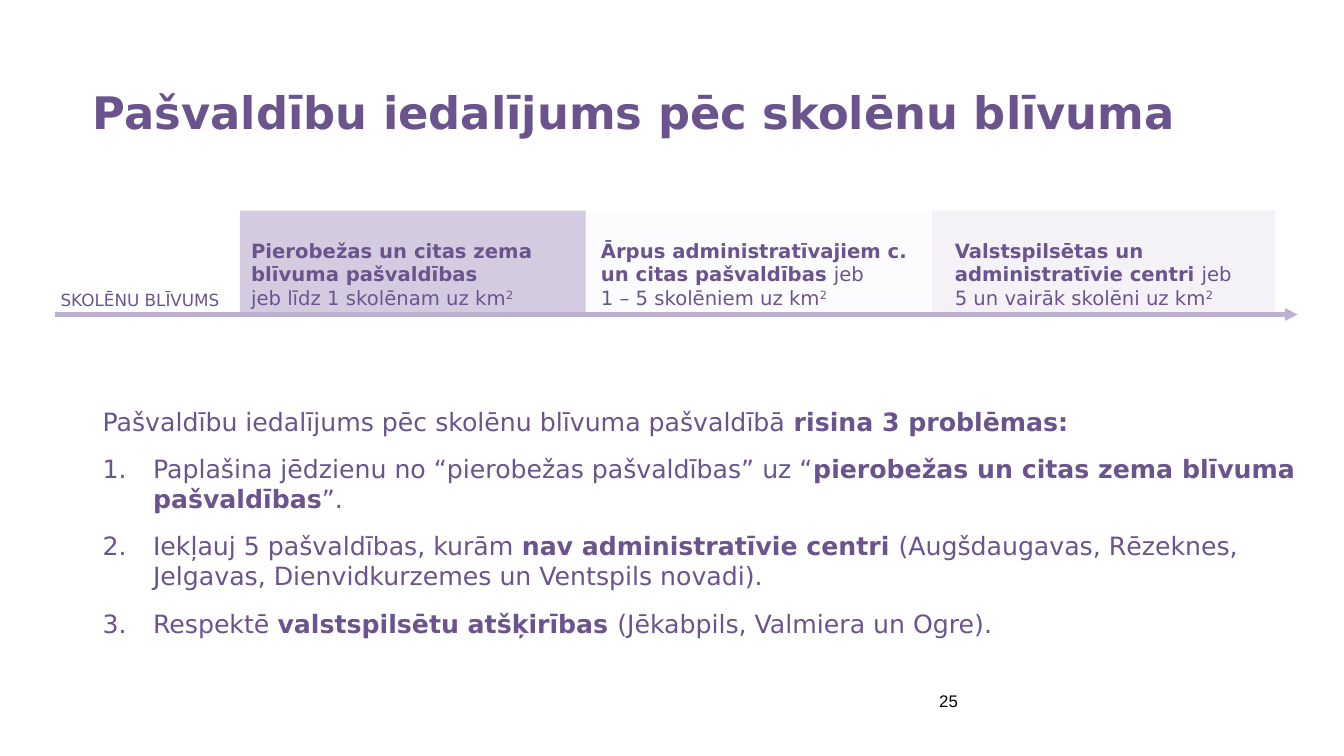
from dataclasses import dataclass

from pptx import Presentation
from pptx.dml.color import RGBColor
from pptx.enum.shapes import MSO_CONNECTOR, MSO_SHAPE
from pptx.enum.text import MSO_ANCHOR, MSO_AUTO_SIZE, PP_ALIGN
from pptx.oxml.ns import qn
from pptx.slide import Slide
from pptx.text.text import TextFrame, _Paragraph as Paragraph
from pptx.util import Emu, Pt
from lxml.etree import SubElement

PURPLE = RGBColor(0x6B, 0x54, 0x8D)
AXIS_COLOR = RGBColor(0xBD, 0xB0, 0xCF)
BLACK = RGBColor(0, 0, 0)
FONT = "DejaVu Sans"
EMU_PER_PX = 9144
BAND_TOP, BAND_HEIGHT = 209, 104
BAND_OPACITY = 28
AXIS_Y = 312


@dataclass(frozen=True)
class Span:
    text: str
    bold: bool = False
    superscript: bool = False


@dataclass(frozen=True)
class Box:
    left: int
    top: int
    width: int
    height: int

    def emu(self) -> tuple[Emu, ...]:
        return tuple(px(side) for side in (self.left, self.top, self.width, self.height))


@dataclass(frozen=True)
class Band:
    left: int
    width: int
    color: RGBColor
    label_left: int
    label_width: int
    heading: str
    joined: str
    density: str


BANDS = [
    Band(238, 343, RGBColor(0x66, 0x46, 0x90), 244, 322,
         "Pierobežas un citas zema blīvuma pašvaldības", "", "jeb līdz 1 skolēnam uz km"),
    Band(581, 341, RGBColor(0xF5, 0xF4, 0xF8), 591, 317,
         "Ārpus administratīvajiem c. un citas pašvaldības ", "jeb", "1 – 5 skolēniem uz km"),
    Band(924, 341, RGBColor(0xDA, 0xD3, 0xE5), 942, 304,
         "Valstspilsētas un administratīvie centri ", "jeb", "5 un vairāk skolēni uz km"),
]

INTRO = [Span("Pašvaldību iedalījums pēc skolēnu blīvuma pašvaldībā "),
         Span("risina 3 problēmas:", bold=True)]
PROBLEMS = [
    [Span("Paplašina jēdzienu no “pierobežas pašvaldības” uz “"),
     Span("pierobežas un citas zema blīvuma pašvaldības", bold=True), Span("”.")],
    [Span("Iekļauj 5 pašvaldības, kurām "), Span("nav administratīvie centri ", bold=True),
     Span("(Augšdaugavas, Rēzeknes, Jelgavas, Dienvidkurzemes un Ventspils novadi).")],
    [Span("Respektē "), Span("valstspilsētu atšķirības ", bold=True),
     Span("(Jēkabpils, Valmiera un Ogre).")],
]


def px(length: int) -> Emu:
    return Emu(length * EMU_PER_PX)


def write_spans(paragraph: Paragraph, spans: list[Span], size: int,
                color: RGBColor = PURPLE, font_name: str = FONT) -> None:
    for span in spans:
        run = paragraph.add_run()
        run.text = span.text
        run.font.name = font_name
        run.font.size = Pt(size)
        run.font.bold = span.bold
        run.font.color.rgb = color
        if span.superscript:
            run._r.get_or_add_rPr().set("baseline", "30000")


def set_margins(frame: TextFrame, horizontal: int, vertical: int) -> None:
    frame.margin_left = frame.margin_right = px(horizontal)
    frame.margin_top = frame.margin_bottom = px(vertical)


def add_text(slide: Slide, box: Box, paragraphs: list[list[Span]], size: int,
             color: RGBColor = PURPLE, font_name: str = FONT,
             horizontal_margin: int = 5) -> TextFrame:
    frame = slide.shapes.add_textbox(*box.emu()).text_frame
    frame.word_wrap = True
    set_margins(frame, horizontal_margin, 5)
    for index, spans in enumerate(paragraphs):
        paragraph = frame.add_paragraph() if index else frame.paragraphs[0]
        write_spans(paragraph, spans, size, color, font_name)
    return frame


def format_title(slide: Slide) -> None:
    title = slide.shapes.title
    title.left, title.top, title.width, title.height = Box(92, 80, 1150, 68).emu()
    frame = title.text_frame
    frame.auto_size = MSO_AUTO_SIZE.NONE
    frame.vertical_anchor = MSO_ANCHOR.MIDDLE
    set_margins(frame, 0, 0)
    paragraph = frame.paragraphs[0]
    paragraph.alignment = PP_ALIGN.LEFT
    paragraph.line_spacing = 0.9
    write_spans(paragraph, [Span("Pašvaldību iedalījums pēc skolēnu blīvuma", bold=True)], 32)


def add_problems(slide: Slide) -> None:
    frame = add_text(slide, Box(92, 398, 1203, 242), [INTRO, *PROBLEMS], 18,
                     horizontal_margin=10)
    for index, paragraph in enumerate(frame.paragraphs):
        paragraph.space_after = Pt(6)
        if index:
            paragraph.space_before = Pt(6)
            properties = paragraph._p.get_or_add_pPr()
            properties.set("marL", str(px(50)))
            properties.set("indent", str(px(-50)))
            SubElement(properties, qn("a:buFont"), typeface="+mj-lt")
            SubElement(properties, qn("a:buAutoNum"), type="arabicPeriod")


def add_band(slide: Slide, band: Band) -> None:
    box = Box(band.left, BAND_TOP, band.width, BAND_HEIGHT)
    shape = slide.shapes.add_shape(MSO_SHAPE.RECTANGLE, *box.emu())
    shape.shadow.inherit = False
    shape.line.fill.background()
    shape.fill.solid()
    shape.fill.fore_color.rgb = band.color
    color = shape._element.spPr.find(qn("a:solidFill")).find(qn("a:srgbClr"))
    SubElement(color, qn("a:alpha"), val=str(BAND_OPACITY * 1000))


def add_band_label(slide: Slide, band: Band) -> None:
    heading = [Span(band.heading, bold=True)]
    if band.joined:
        heading.append(Span(band.joined))
    density = [Span(band.density), Span("2", superscript=True)]
    add_text(slide, Box(band.label_left, 232, band.label_width, 81), [heading, density], 14)


def add_axis(slide: Slide) -> None:
    axis = slide.shapes.add_connector(
        MSO_CONNECTOR.STRAIGHT, px(55), px(AXIS_Y), px(1287), px(AXIS_Y))
    axis.line.color.rgb = AXIS_COLOR
    axis.line.width = Pt(3)
    SubElement(axis.line._get_or_add_ln(), qn("a:tailEnd"), type="triangle")
    SubElement(axis._element.spPr, qn("a:effectLst"))


def main() -> None:
    presentation = Presentation()
    presentation.slide_width = px(1333)
    presentation.slide_height = px(750)
    slide = presentation.slides.add_slide(presentation.slide_layouts.get_by_name("Title Only"))
    format_title(slide)
    add_problems(slide)
    for band in BANDS:
        add_band(slide, band)
    add_axis(slide)
    axis_label = add_text(slide, Box(46, 282, 186, 31), [[Span("SKOLĒNU BLĪVUMS")]], 12)
    axis_label.paragraphs[0].alignment = PP_ALIGN.CENTER
    for band in BANDS:
        add_band_label(slide, band)
    page_number = add_text(slide, Box(644, 675, 311, 40), [[Span("25")]], 12, BLACK, "Arial")
    page_number.vertical_anchor = MSO_ANCHOR.MIDDLE
    page_number.paragraphs[0].alignment = PP_ALIGN.RIGHT
    presentation.save("out.pptx")


if __name__ == "__main__":
    main()
